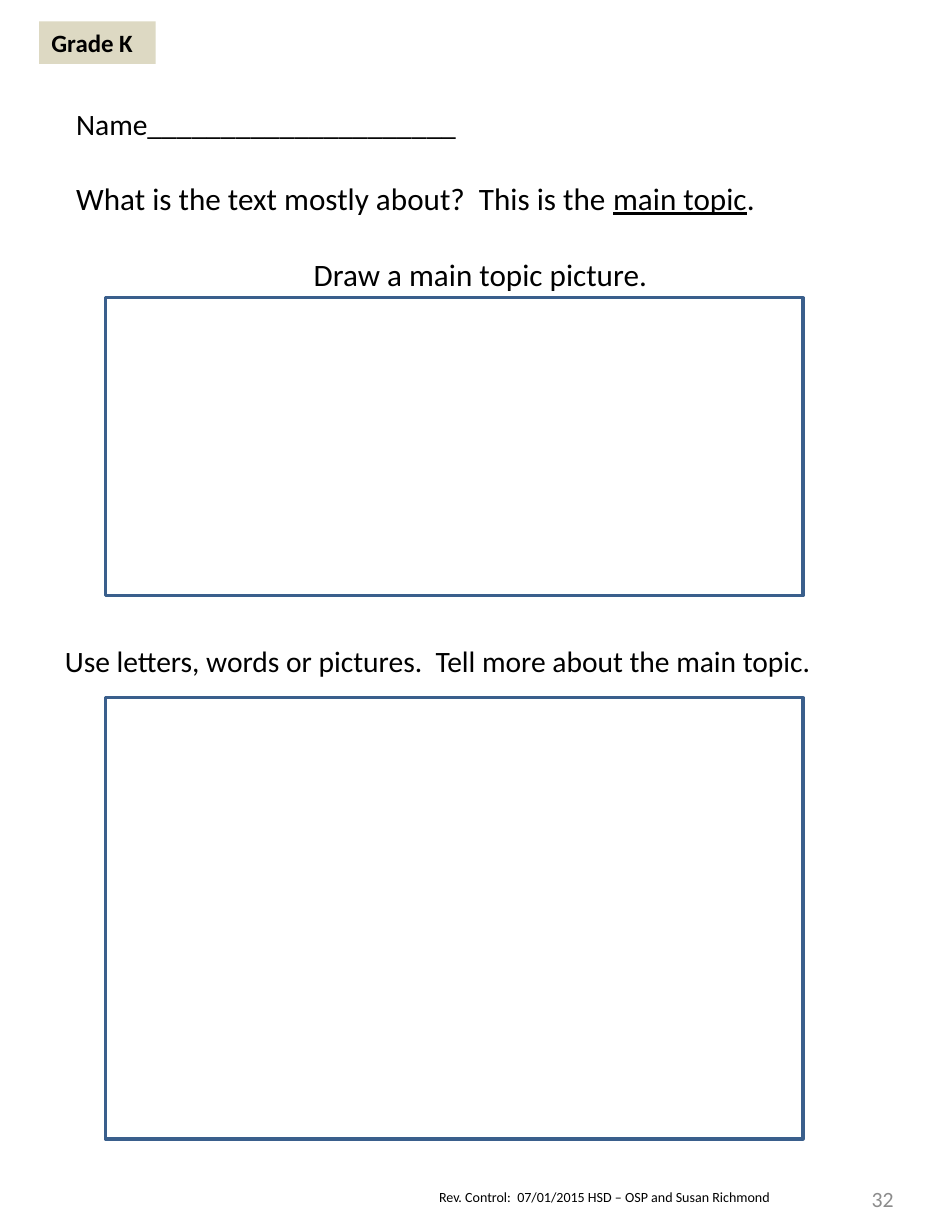
from pptx import Presentation
from pptx.dml.color import RGBColor
from pptx.enum.shapes import MSO_SHAPE
from pptx.enum.text import MSO_ANCHOR as ANCHOR, PP_ALIGN as ALIGN
from pptx.util import Inches, Pt

BLACK, GREY, BLUE, TAN = "000000", "8C8C8C", "3A5F8C", "DDD9C3"
FRAME_X, FRAME_W = 0.94, 6.23
TEXT_W = 7.44
BLANK_LINE = 24.4  # one line of 20 pt Calibri


def color(hex_code):
    return RGBColor.from_string(hex_code)


def set_text(sp, paragraphs, size, hue=BLACK, bold=False, align=ALIGN.LEFT,
             anchor=ANCHOR.TOP, gap=0):
    """Fill a shape; each paragraph is a list of (text, underlined) runs."""
    tf = sp.text_frame
    tf.word_wrap = True
    tf.vertical_anchor = anchor
    tf.margin_left = tf.margin_right = Inches(0.11)
    tf.margin_top = tf.margin_bottom = Inches(0.06)
    for i, runs in enumerate(paragraphs):
        p = tf.add_paragraph() if i else tf.paragraphs[0]
        p.alignment = align
        p.space_before = Pt(gap if i else 0)
        p.font.name, p.font.size, p.font.bold = "Calibri", Pt(size), bold
        p.font.color.rgb = color(hue)
        for text, underlined in runs:
            r = p.add_run()
            r.text = text
            if underlined:
                r.font.underline = True
    return tf


def add_text(s, box, paragraphs, size, **style):
    sp = s.shapes.add_textbox(*map(Inches, box))
    return set_text(sp, paragraphs, size, **style)


def add_rect(s, box, fill=None, line=None):
    sp = s.shapes.add_shape(MSO_SHAPE.RECTANGLE, *map(Inches, box))
    sp.shadow.inherit = False
    if fill:
        sp.fill.solid()
        sp.fill.fore_color.rgb = color(fill)
    else:
        sp.fill.background()
    if line:
        sp.line.color.rgb = color(line)
        sp.line.width = Pt(2)
    else:
        sp.line.fill.background()
    return sp


def add_grade_tag(s, box):
    set_text(add_rect(s, box, fill=TAN), [[("Grade K", False)]], 16, bold=True)


def add_prompts(s, box):
    tf = add_text(s, box, [
        [("Name_____________________", False)],
        [("What is the text mostly about?  This is the ", False),
         ("main topic", True), (".", False)],
        [("Draw a main topic picture.", False)],
    ], 20, anchor=ANCHOR.BOTTOM, gap=BLANK_LINE)
    name, _, draw = tf.paragraphs
    name.font.size = Pt(19)
    draw.alignment = ALIGN.CENTER


def add_footer(s, note_box, number_box):
    tf = add_text(s, note_box, [[
        ("Rev. Control:  07/01/2015 HSD – OSP and Susan Richmond", False)]], 9)
    tf.margin_top = tf.margin_bottom = Inches(0.05)
    add_text(s, number_box, [[("32", False)]], 14, hue=GREY,
             align=ALIGN.RIGHT, anchor=ANCHOR.MIDDLE)


def main():
    prs = Presentation()
    prs.slide_width, prs.slide_height = Inches(8.5), Inches(11)
    s = prs.slides.add_slide(prs.slide_layouts[6])

    add_footer(s, (3.81, 10.56, 4.25, 0.26), (7.17, 10.41, 0.92, 0.59))
    add_grade_tag(s, (0.35, 0.19, 1.04, 0.38))

    # Main topic: questions and drawing frame
    add_prompts(s, (0.57, 0.55, TEXT_W, 2.12))
    add_rect(s, (FRAME_X, 2.66, FRAME_W, 2.66), line=BLUE)

    # Details: instruction and writing frame
    add_text(s, (0.47, 5.68, TEXT_W, 0.43), [[
        ("Use letters, words or pictures.  Tell more about the main topic.",
         False)]], 19)
    add_rect(s, (FRAME_X, 6.23, FRAME_W, 3.94), line=BLUE)

    prs.save("out.pptx")


if __name__ == "__main__":
    main()
